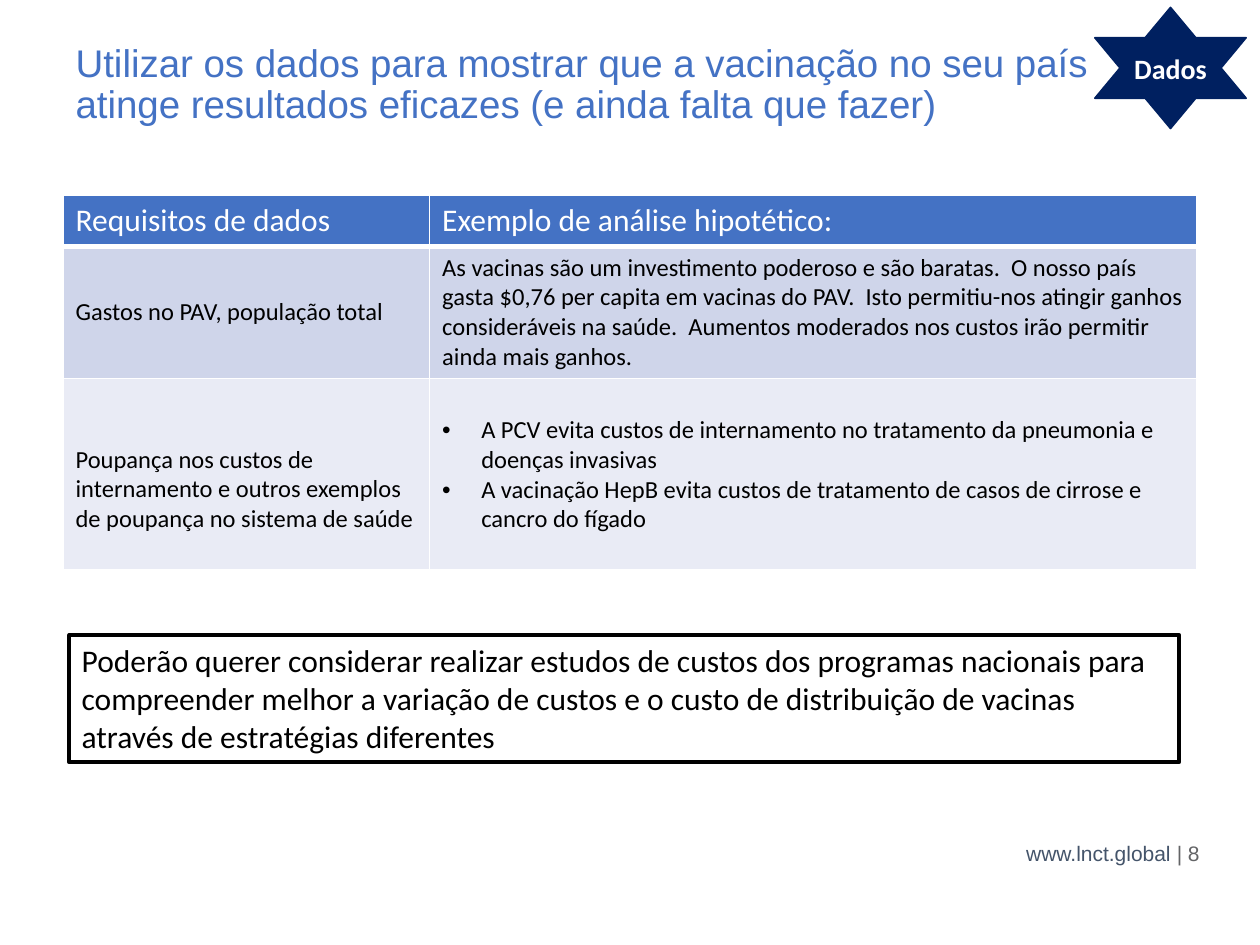
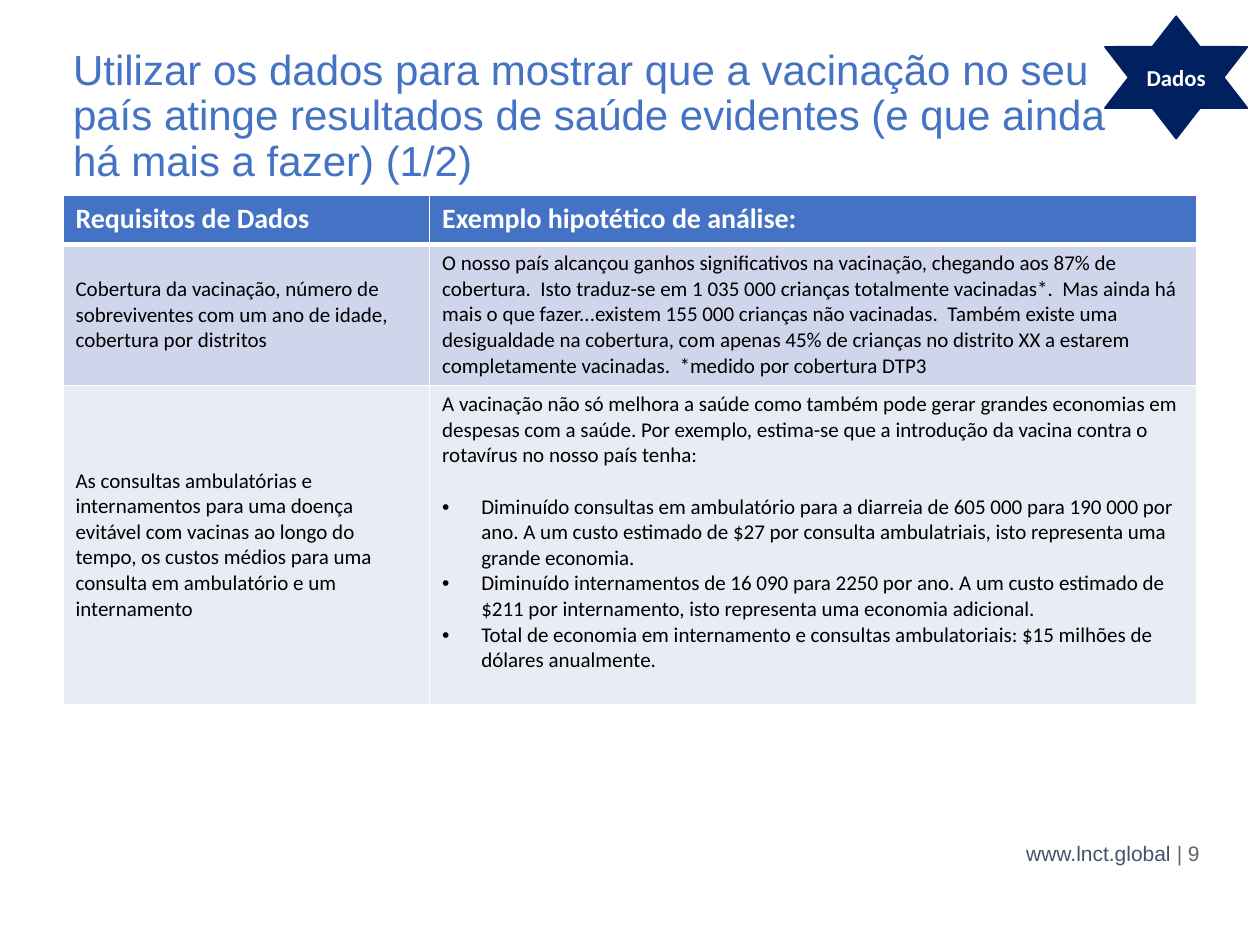
from dataclasses import dataclass

from lxml.etree import SubElement
from pptx import Presentation
from pptx.dml.color import RGBColor
from pptx.enum.shapes import MSO_SHAPE
from pptx.enum.text import MSO_ANCHOR, MSO_AUTO_SIZE, PP_ALIGN
from pptx.oxml.ns import qn
from pptx.util import Inches, Pt

COLORS = {
    "blue": "4472C4",
    "navy": "002060",
    "slate": "44546A",
    "gray": "636466",
    "band_dark": "CFD5EA",
    "band_light": "E9EBF5",
    "white": "FFFFFF",
    "black": "000000",
}
ROW_FILLS = ("blue", "band_dark", "band_light")
TABLE_LEFT, TABLE_TOP = 0.5, 1.55
COLUMN_WIDTHS = (2.91, 6.09)
BULLET_INDENT = 0.31


@dataclass(frozen=True)
class Box:
    left: float
    top: float
    width: float
    height: float

    def lengths(self) -> tuple:
        return tuple(Inches(value) for value in (self.left, self.top, self.width, self.height))


@dataclass(frozen=True)
class Line:
    text: str
    bullet: bool = False
    space_before: float = 0


@dataclass(frozen=True)
class CellText:
    lines: tuple
    centered: bool = False
    margin_top: float = 0.05


@dataclass(frozen=True)
class DataTable:
    rows: tuple
    heights: tuple
    header_size: int
    header_bold: bool
    body_size: int


@dataclass(frozen=True)
class DataSlide:
    number: int
    title: str
    title_box: Box
    title_size: int
    star_box: Box
    star_size: int
    table: DataTable
    note: str = ""


FOOTER_BOX = Box(7.29, 6.57, 2.33, 0.4)
NOTE_BOX = Box(0.55, 5.04, 8.81, 1.01)

DATA_SLIDES = (
    DataSlide(
        number=8,
        title="Utilizar os dados para mostrar que a vacinação no seu país atinge "
              "resultados eficazes (e ainda falta que fazer)",
        title_box=Box(0.5, 0.3, 8.43, 1.25),
        title_size=22,
        star_box=Box(8.69, 0.06, 1.2, 0.96),
        star_size=16,
        table=DataTable(
            rows=(
                (CellText((Line("Requisitos de dados"),)),
                 CellText((Line("Exemplo de análise hipotético:"),))),
                (CellText((Line("Gastos no PAV, população total"),), centered=True),
                 CellText((Line(
                     "As vacinas são um investimento poderoso e são baratas.  O nosso país gasta "
                     "$0,76 per capita em vacinas do PAV.  Isto permitiu-nos atingir ganhos "
                     "consideráveis na saúde.  Aumentos moderados nos custos irão permitir ainda "
                     "mais ganhos."),))),
                (CellText((Line(
                    "Poupança nos custos de internamento e outros exemplos de poupança no "
                    "sistema de saúde"),), centered=True, margin_top=0.29),
                 CellText((
                     Line("A PCV evita custos de internamento no tratamento da pneumonia e "
                          "doenças invasivas", bullet=True),
                     Line("A vacinação HepB evita custos de tratamento de casos de cirrose e "
                          "cancro do fígado", bullet=True)), margin_top=0.29)),
            ),
            heights=(0.4, 1.05, 1.52),
            header_size=18,
            header_bold=False,
            body_size=14,
        ),
        note="Poderão querer considerar realizar estudos de custos dos programas nacionais para "
             "compreender melhor a variação de custos e o custo de distribuição de vacinas "
             "através de estratégias diferentes",
    ),
    DataSlide(
        number=9,
        title="Utilizar os dados para mostrar que a vacinação no seu país atinge resultados de "
              "saúde evidentes (e que ainda há mais a fazer) (1/2)",
        title_box=Box(0.48, 0.34, 8.54, 1.25),
        title_size=24,
        star_box=Box(8.77, 0.13, 1.13, 0.97),
        star_size=13,
        table=DataTable(
            rows=(
                (CellText((Line("Requisitos de Dados"),)),
                 CellText((Line("Exemplo hipotético de análise:"),))),
                (CellText((Line(
                    "Cobertura da vacinação, número de sobreviventes com um ano de idade, "
                    "cobertura por distritos"),), centered=True),
                 CellText((Line(
                     "O nosso país alcançou ganhos significativos na vacinação, chegando aos 87% "
                     "de cobertura.  Isto traduz-se em 1 035 000 crianças totalmente vacinadas*.  "
                     "Mas ainda há mais o que fazer...existem 155 000 crianças não vacinadas.  "
                     "Também existe uma desigualdade na cobertura, com apenas 45% de crianças no "
                     "distrito XX a estarem completamente vacinadas.  *medido por cobertura "
                     "DTP3"),))),
                (CellText((Line(
                    "As consultas ambulatórias e internamentos para uma doença evitável com "
                    "vacinas ao longo do tempo, os custos médios para uma consulta em "
                    "ambulatório e um internamento"),), centered=True),
                 CellText((
                     Line("A vacinação não só melhora a saúde como também pode gerar grandes "
                          "economias em despesas com a saúde. Por exemplo, estima-se que a "
                          "introdução da vacina contra o rotavírus no nosso país tenha:"),
                     Line("Diminuído consultas em ambulatório para a diarreia de 605 000 para "
                          "190 000 por ano. A um custo estimado de $27 por consulta "
                          "ambulatriais, isto representa uma grande economia.",
                          bullet=True, space_before=14.6),
                     Line("Diminuído internamentos de 16 090 para 2250 por ano. A um custo "
                          "estimado de $211 por internamento, isto representa uma economia "
                          "adicional.", bullet=True),
                     Line("Total de economia em internamento e consultas ambulatoriais: $15 "
                          "milhões de dólares anualmente.", bullet=True)))),
            ),
            heights=(0.39, 1.12, 2.53),
            header_size=16,
            header_bold=True,
            body_size=12,
        ),
    ),
)


def rgb(color: str) -> RGBColor:
    return RGBColor.from_string(COLORS[color])


def apply_values(target, values: dict) -> None:
    for name, value in values.items():
        setattr(target, name, value)


def format_font(font, size: int, color: str, name: str = "Calibri", bold: bool = False) -> None:
    apply_values(font, {"name": name, "size": Pt(size), "bold": bold})
    font.color.rgb = rgb(color)


def add_bullet(paragraph) -> None:
    properties = paragraph._p.get_or_add_pPr()
    indent = Inches(BULLET_INDENT)
    properties.set("marL", str(indent))
    properties.set("indent", str(-indent))
    SubElement(properties, qn("a:buFont"), typeface="Arial")
    SubElement(properties, qn("a:buChar"), char="•")


def add_borders(cell, bottom_width: float) -> None:
    properties = cell._tc.get_or_add_tcPr()
    for side, width in (("lnL", 1), ("lnR", 1), ("lnT", 1), ("lnB", bottom_width)):
        border = SubElement(properties, qn(f"a:{side}"), w=str(Pt(width)))
        fill = SubElement(border, qn("a:solidFill"))
        SubElement(fill, qn("a:srgbClr"), val=COLORS["white"])


def fill_cell(cell, content: CellText, row_index: int, table: DataTable) -> None:
    header = row_index == 0
    add_borders(cell, 3 if header else 1)
    cell.fill.solid()
    cell.fill.fore_color.rgb = rgb(ROW_FILLS[row_index])
    apply_values(cell, {
        "vertical_anchor": MSO_ANCHOR.MIDDLE if content.centered else MSO_ANCHOR.TOP,
        "margin_top": Inches(content.margin_top),
    })
    frame = cell.text_frame
    for index, line in enumerate(content.lines):
        paragraph = frame.add_paragraph() if index else frame.paragraphs[0]
        if line.space_before:
            paragraph.space_before = Pt(line.space_before)
        if line.bullet:
            add_bullet(paragraph)
        run = paragraph.add_run()
        run.text = line.text
        if header:
            format_font(run.font, table.header_size, "white", bold=table.header_bold)
        else:
            format_font(run.font, table.body_size, "black")


def add_data_table(slide, data: DataTable) -> None:
    box = Box(TABLE_LEFT, TABLE_TOP, sum(COLUMN_WIDTHS), sum(data.heights))
    table = slide.shapes.add_table(len(data.rows), len(COLUMN_WIDTHS), *box.lengths()).table
    for column, width in zip(table.columns, COLUMN_WIDTHS):
        column.width = Inches(width)
    for row_index, (contents, height) in enumerate(zip(data.rows, data.heights)):
        table.rows[row_index].height = Inches(height)
        for column_index, content in enumerate(contents):
            fill_cell(table.cell(row_index, column_index), content, row_index, data)


def set_title(slide, data: DataSlide) -> None:
    title = slide.shapes.title
    apply_values(title, dict(zip(("left", "top", "width", "height"), data.title_box.lengths())))
    frame = title.text_frame
    frame.text = data.title
    apply_values(frame, {
        "word_wrap": True,
        "auto_size": MSO_AUTO_SIZE.NONE,
        "vertical_anchor": MSO_ANCHOR.TOP,
    })
    paragraph = frame.paragraphs[0]
    apply_values(paragraph, {"alignment": PP_ALIGN.LEFT, "line_spacing": 0.9})
    format_font(paragraph.runs[0].font, data.title_size, "blue", name="Arial")


def add_footer(slide, number: int) -> None:
    frame = slide.shapes.add_textbox(*FOOTER_BOX.lengths()).text_frame
    apply_values(frame, {"word_wrap": True, "vertical_anchor": MSO_ANCHOR.MIDDLE})
    paragraph = frame.paragraphs[0]
    paragraph.alignment = PP_ALIGN.RIGHT
    for text, color in (("www.lnct.global ", "slate"), (f"| {number}", "gray")):
        run = paragraph.add_run()
        run.text = text
        format_font(run.font, 12, color, name="Arial")


def add_star(slide, box: Box, size: int) -> None:
    star = slide.shapes.add_shape(MSO_SHAPE.STAR_6_POINT, *box.lengths())
    star.shadow.inherit = False
    star.fill.solid()
    star.fill.fore_color.rgb = rgb("navy")
    star.line.color.rgb = rgb("navy")
    star.line.width = Pt(1)
    frame = star.text_frame
    frame.text = "Dados"
    apply_values(frame, {"word_wrap": False, "vertical_anchor": MSO_ANCHOR.MIDDLE})
    paragraph = frame.paragraphs[0]
    paragraph.alignment = PP_ALIGN.CENTER
    format_font(paragraph.runs[0].font, size, "white", bold=True)


def add_note(slide, text: str) -> None:
    note = slide.shapes.add_shape(MSO_SHAPE.RECTANGLE, *NOTE_BOX.lengths())
    note.shadow.inherit = False
    note.fill.background()
    note.line.color.rgb = rgb("black")
    note.line.width = Pt(2.25)
    frame = note.text_frame
    frame.text = text
    apply_values(frame, {"word_wrap": True, "vertical_anchor": MSO_ANCHOR.TOP})
    paragraph = frame.paragraphs[0]
    paragraph.alignment = PP_ALIGN.LEFT
    format_font(paragraph.runs[0].font, 18, "black")


def main() -> None:
    presentation = Presentation()
    apply_values(presentation, {"slide_width": Inches(10), "slide_height": Inches(7.5)})
    for data in DATA_SLIDES:
        slide = presentation.slides.add_slide(presentation.slide_layouts[5])
        set_title(slide, data)
        add_data_table(slide, data.table)
        add_footer(slide, data.number)
        add_star(slide, data.star_box, data.star_size)
        if data.note:
            add_note(slide, data.note)
    presentation.save("out.pptx")


if __name__ == "__main__":
    main()
